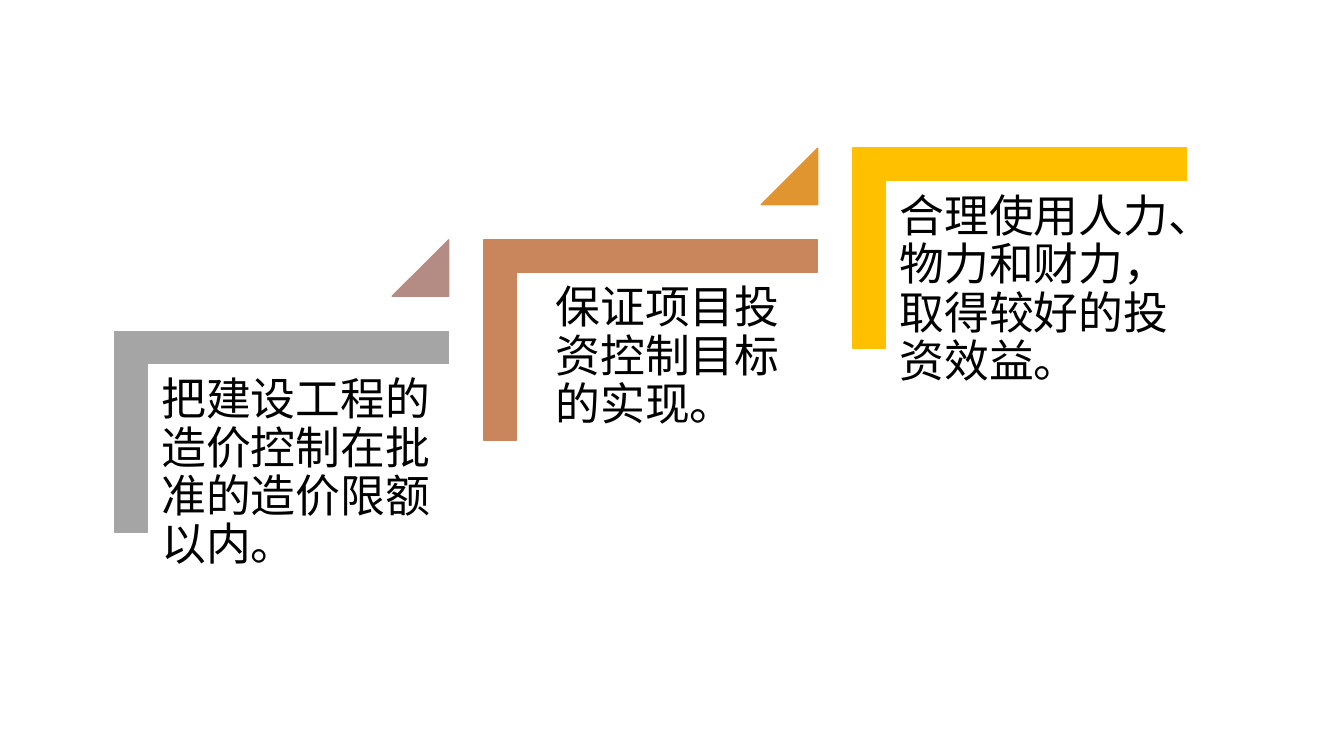
from lxml import etree
from pptx import Presentation
from pptx.dml.color import RGBColor
from pptx.enum.shapes import MSO_SHAPE
from pptx.enum.text import MSO_ANCHOR, PP_ALIGN
from pptx.oxml.ns import qn
from pptx.util import Inches, Pt

CORNER = MSO_SHAPE.CORNER
TRIANGLE = MSO_SHAPE.ISOSCELES_TRIANGLE
TOP = MSO_ANCHOR.TOP
LEFT = PP_ALIGN.LEFT

GRAY = RGBColor(0xA5, 0xA5, 0xA5)
ROSE = RGBColor(0xB4, 0x8C, 0x83)
COPPER = RGBColor(0xC9, 0x85, 0x5C)
ORANGE = RGBColor(0xE1, 0x95, 0x30)
GOLD = RGBColor(0xFF, 0xC0, 0x00)
BLACK = RGBColor(0, 0, 0)

FONT = "Noto Sans CJK JP"
BLANK_LAYOUT = 6
COLUMN = 3.66
ROW = 0.91
FIRST_LEFT = 1.8
FIRST_TOP = 2.63
CORNER_WIDTH = 1.99
CORNER_HEIGHT = 3.31
CORNER_THICKNESS = 0.16
TRIANGLE_SIZE = 0.56
TEXT_WIDTH = 2.99
TEXT_HEIGHT = 2.62
INSET = 0.13

STEPS = [
    ("把建设工程的造价控制在批准的造价限额以内。", GRAY, ROSE, 0),
    ("保证项目投资控制目标的实现。", COPPER, ORANGE, 0.25),
    ("合理使用人力、物力和财力，取得较好的投资效益。", GOLD, None, 0),
]


def add_block(group, kind, left, top, width, height, color, adjustments):
    shape = group.shapes.add_shape(
        kind, Inches(left), Inches(top), Inches(width), Inches(height))
    for index, value in enumerate(adjustments):
        shape.adjustments[index] = value
    shape.shadow.inherit = False
    shape.fill.solid()
    shape.fill.fore_color.rgb = color
    shape.line.color.rgb = color
    shape.line.width = Pt(1)
    return shape


def add_text(group, text, left, top, width):
    box = group.shapes.add_textbox(
        Inches(left), Inches(top), Inches(width), Inches(TEXT_HEIGHT))
    frame = box.text_frame
    frame.word_wrap = True
    frame.vertical_anchor = TOP
    frame.margin_left = frame.margin_right = Inches(INSET)
    frame.margin_top = frame.margin_bottom = Inches(INSET)
    paragraph = frame.paragraphs[0]
    paragraph.alignment = LEFT
    paragraph.line_spacing = 0.9
    run = paragraph.add_run()
    run.text = text
    run.font.size = Pt(32)
    run.font.name = FONT
    run.font.color.rgb = BLACK
    east_asian = etree.SubElement(run.font._element, qn("a:ea"))
    east_asian.set("typeface", FONT)


def add_step(group, number, text, color, triangle_color, indent):
    left = FIRST_LEFT + number * COLUMN
    top = FIRST_TOP - number * ROW
    corner = add_block(group, CORNER, left, top, CORNER_WIDTH, CORNER_HEIGHT,
                       color, (CORNER_THICKNESS, CORNER_THICKNESS))
    corner.rotation = 90
    add_text(group, text, left - 0.33 + indent, top + 0.98,
             TEXT_WIDTH - 2 * indent)
    if triangle_color is not None:
        add_block(group, TRIANGLE, left + 2.09, top - 0.25,
                  TRIANGLE_SIZE, TRIANGLE_SIZE, triangle_color, (1,))


def main():
    presentation = Presentation()
    presentation.slide_width = Inches(13.33)
    presentation.slide_height = Inches(7.5)
    slide = presentation.slides.add_slide(
        presentation.slide_layouts[BLANK_LAYOUT])
    staircase = slide.shapes.add_group_shape()
    for number, step in enumerate(STEPS):
        add_step(staircase, number, *step)
    presentation.save("out.pptx")


if __name__ == "__main__":
    main()
